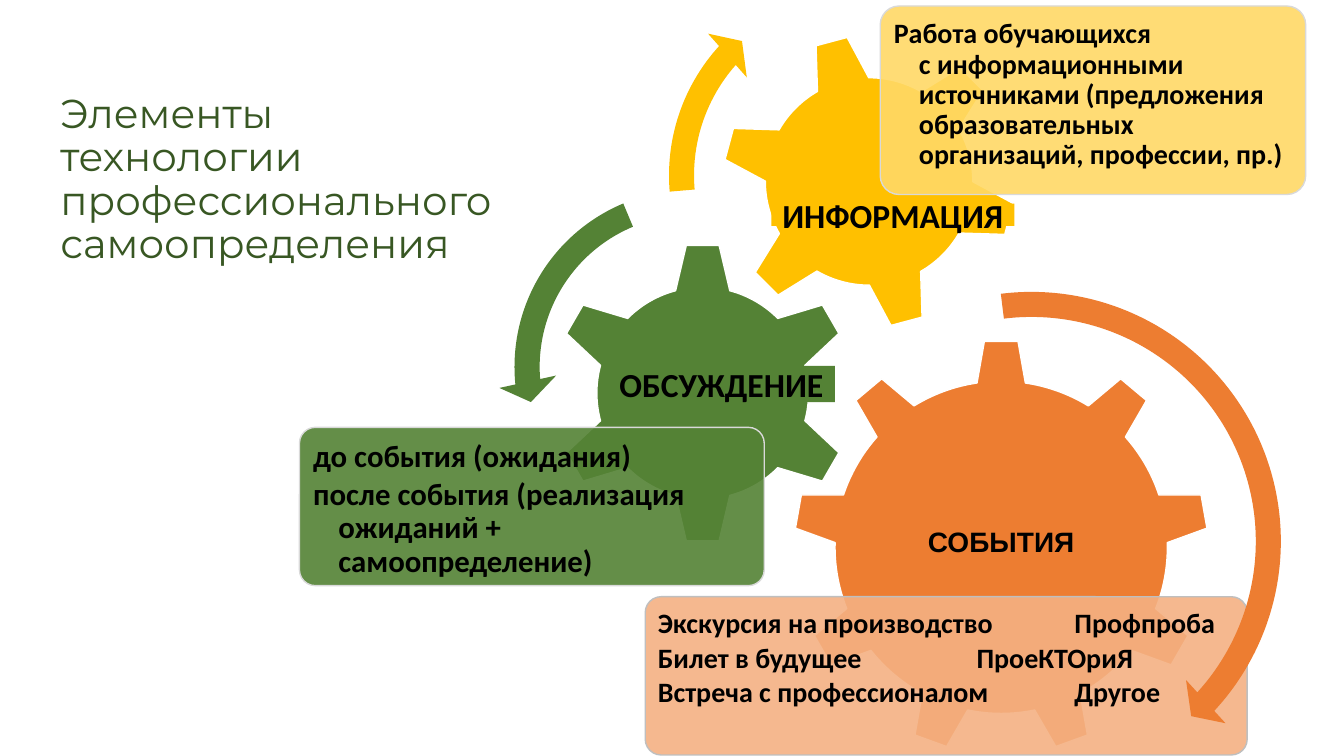
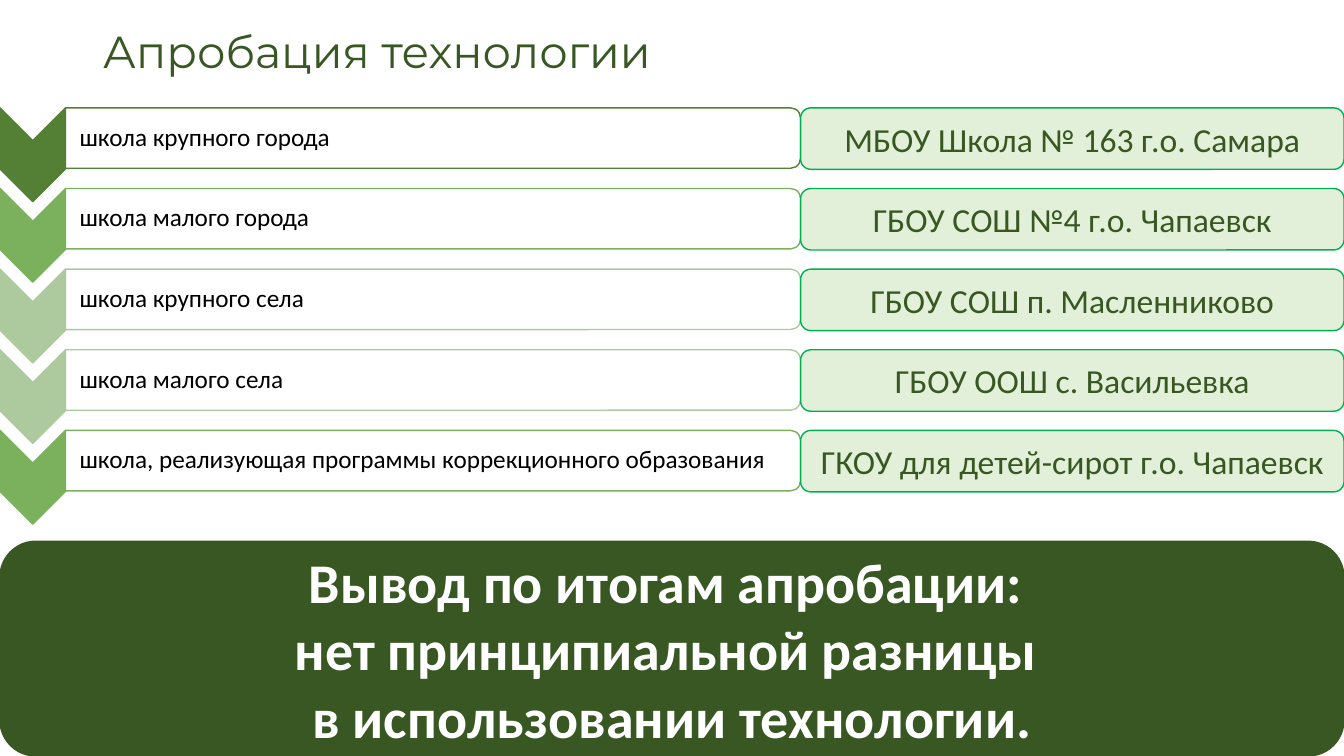
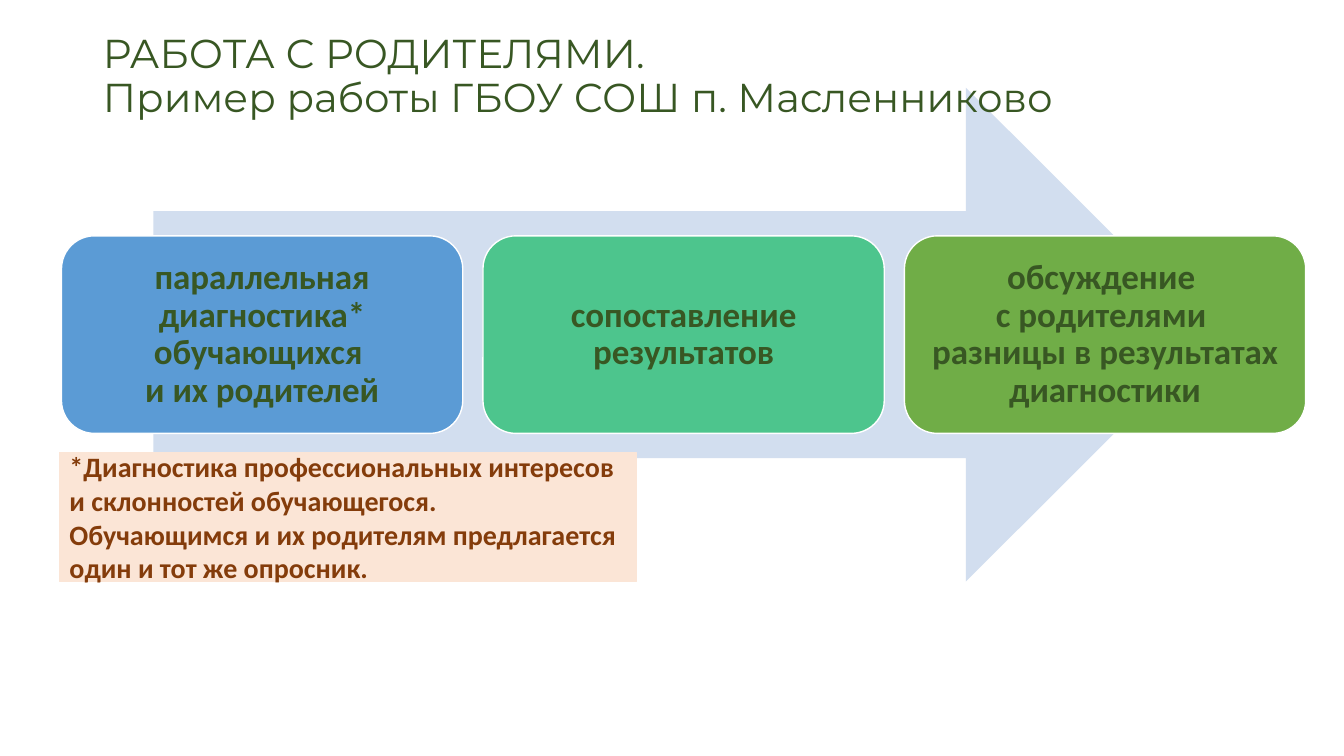
from dataclasses import dataclass

from lxml.etree import SubElement
from pptx import Presentation
from pptx.dml.color import RGBColor
from pptx.enum.shapes import MSO_SHAPE
from pptx.enum.text import MSO_ANCHOR, MSO_AUTO_SIZE, PP_ALIGN
from pptx.oxml.ns import qn
from pptx.util import Inches, Pt


@dataclass(frozen=True)
class Theme:
    title_font: str = "Montserrat"
    body_font: str = "Calibri"
    label_font: str = "Arial"
    title: float = 32
    title_small: float = 28.8
    conclusion: float = 40
    step: float = 25
    label: float = 24
    panel_large: float = 22
    panel: float = 20
    row: float = 18
    black: str = "000000"
    white: str = "FFFFFF"
    dark_green: str = "385723"
    gear_green: str = "548235"
    yellow: str = "FFC000"
    pale_yellow: str = "FFD966"
    orange: str = "ED7D31"
    pale_orange: str = "F4B183"
    light_gray: str = "D9D9D9"
    gray: str = "BFBFBF"
    deep_green: str = "538035"
    mid_green: str = "7BB15D"
    soft_green: str = "ACCA9E"
    pale_green: str = "E2F0D9"
    edge_green: str = "00B050"
    pale_blue: str = "D2DEEF"
    blue: str = "5B9BD5"
    mint: str = "4DC58D"
    leaf: str = "70AD47"
    peach: str = "FBE5D6"
    brown: str = "843C0B"


T = Theme()


def rgb(color):
    return RGBColor.from_string(color)


def add_title(prs, text, left, top, size):
    """Add a title-only slide and return it."""
    s = prs.slides.add_slide(prs.slide_layouts[5])
    title = s.shapes.title
    title.left, title.top = Inches(left), Inches(top)
    title.width, title.height = Inches(11.5), Inches(0.74)
    write(title, [text], size, T.dark_green, font=T.title_font,
          align=PP_ALIGN.LEFT, spacing=0.9)
    return s


def add_shape(s, kind, box, fill, line=None, opacity=100, rotation=0, adj=()):
    sp = s.shapes.add_shape(kind, *[Inches(v) for v in box])
    sp.shadow.inherit = False
    sp.rotation = rotation
    for i, value in enumerate(adj):
        sp.adjustments[i] = value
    sp.fill.solid()
    sp.fill.fore_color.rgb = rgb(fill)
    if opacity < 100:
        color = sp.element.spPr.find(qn("a:solidFill"))[0]
        SubElement(color, qn("a:alpha"), val=str(opacity * 1000))
    if line:
        sp.line.color.rgb = rgb(line)
        sp.line.width = Pt(1)
    else:
        sp.line.fill.background()
    return sp


def add_turned(s, kind, box, fill, line, opacity=100):
    """Add a shape turned by 90 degrees that covers the given box."""
    x, y, w, h = box
    frame = (x + (w - h) / 2, y + (h - w) / 2, h, w)
    return add_shape(s, kind, frame, fill, line, opacity, rotation=90)


def write(sp, texts, size, color, bold=False, font=T.body_font,
          align=PP_ALIGN.CENTER, anchor=MSO_ANCHOR.MIDDLE, spacing=None,
          after=0, insets=None, hanging=0):
    """Write one paragraph per text; after is a share of the type size."""
    tf = sp.text_frame
    tf.word_wrap = True
    tf.auto_size = MSO_AUTO_SIZE.NONE
    tf.vertical_anchor = anchor
    if insets:
        (tf.margin_left, tf.margin_top,
         tf.margin_right, tf.margin_bottom) = [Inches(v) for v in insets]
    for i, text in enumerate(texts):
        p = tf.paragraphs[0] if i == 0 else tf.add_paragraph()
        p.text = text
        p.alignment = align
        p.line_spacing = spacing
        p.space_after = Pt(size * after)
        if hanging:
            pPr = p._p.get_or_add_pPr()
            pPr.set("marL", str(Inches(hanging)))
            pPr.set("indent", str(-Inches(hanging)))
            pPr.set("defTabSz", str(Inches(0.97)))
        for r in p.runs:
            r.font.size = Pt(size)
            r.font.bold = bold
            r.font.name = font
            r.font.color.rgb = rgb(color)


def add_panel(s, box, fill, line, texts, size, inset):
    sp = add_shape(s, MSO_SHAPE.ROUNDED_RECTANGLE, box, fill, line, 90, adj=[0.1])
    write(sp, texts, size, T.black, bold=True, align=PP_ALIGN.LEFT,
          anchor=MSO_ANCHOR.TOP, spacing=0.9, after=0.15,
          insets=[inset] * 4, hanging=0.25)


def add_label(s, box, fill, text):
    write(add_shape(s, MSO_SHAPE.RECTANGLE, box, fill), [text],
          T.label, T.black, bold=True)


def build_elements(prs):
    s = add_title(prs, "Элементы \nтехнологии\nпрофессионального \nсамоопределения",
                  0.5, 1.42, T.title_small)

    events = add_shape(s, MSO_SHAPE.GEAR_9, (7.87, 3.37, 4.12, 4.12), T.orange, T.white)
    write(events, ["СОБЫТИЯ"], T.panel, T.black, bold=True, font=T.label_font,
          spacing=0.9, insets=[0.03] * 4)
    add_panel(s, (6.4, 5.92, 5.97, 1.57), T.pale_orange, T.gray,
              ["Экскурсия на производство\tПрофпроба",
               "Билет в будущее\t\tПроеКТОриЯ",
               "Встреча с профессионалом\tДругое"], T.panel, 0.08)

    add_shape(s, MSO_SHAPE.GEAR_6, (5.47, 2.4, 3, 3), T.gear_green, T.white)
    add_panel(s, (2.97, 4.24, 4.61, 1.57), T.gear_green, T.light_gray,
              ["до события (ожидания)",
               "после события (реализация \nожиданий + \nсамоопределение)"],
              T.panel_large, 0.09)

    add_shape(s, MSO_SHAPE.GEAR_6, (7.15, 0.33, 2.94, 2.94), T.yellow, T.white,
              rotation=345)
    add_panel(s, (8.73, 0.06, 4.22, 1.87), T.pale_yellow, T.light_gray,
              ["Работа обучающихся \nс информационными источниками (предложения "
               "образовательных организаций, профессии, пр.)"], T.panel, 0.08)

    for kind, box, color, adj in [
        (MSO_SHAPE.CIRCULAR_ARROW, (7.59, 2.73, 5.28, 5.28), T.orange,
         (0.047, 2.99, 25.57, 157.77, 0.055)),
        (MSO_SHAPE.LEFT_CIRCULAR_ARROW, (4.94, 1.72, 3.84, 3.84), T.gear_green,
         (0.065, 4.3, 104.89, 148.38, 0.075)),
        (MSO_SHAPE.CIRCULAR_ARROW, (6.47, -0.33, 4.14, 4.14), T.yellow,
         (0.06, 3.94, 133.14, 105.08, 0.07)),
    ]:
        add_shape(s, kind, box, color, adj=adj)

    add_label(s, (6.03, 3.63, 2.25, 0.36), T.gear_green, "ОБСУЖДЕНИЕ")
    add_label(s, (7.65, 2.02, 2.41, 0.22), T.yellow, "ИНФОРМАЦИЯ")


def add_school_row(s, top, color, kind, school):
    add_turned(s, MSO_SHAPE.CHEVRON, (0, top, 0.65, 0.93), color, color)
    add_turned(s, MSO_SHAPE.ROUND_2_SAME_RECTANGLE, (0.65, top, 7.29, 0.6),
               T.white, color, 90)
    text_box = s.shapes.add_textbox(Inches(0.65), Inches(top + 0.03),
                                    Inches(7.26), Inches(0.54))
    write(text_box, [kind], T.row, T.black, align=PP_ALIGN.LEFT, spacing=0.9,
          insets=(0.14, 0.01, 0.01, 0.01), hanging=0.19)
    card = add_shape(s, MSO_SHAPE.ROUNDED_RECTANGLE, (7.94, top, 5.39, 0.61),
                     T.pale_green, T.edge_green)
    write(card, [school], T.label, T.dark_green)


def build_trial(prs):
    s = add_title(prs, "Апробация технологии", 0.92, 0.17, T.title)
    rows = [
        (T.deep_green, "школа крупного города", "МБОУ Школа № 163 г.о. Самара"),
        (T.mid_green, "школа малого города", "ГБОУ СОШ №4 г.о. Чапаевск"),
        (T.soft_green, "школа крупного села", "ГБОУ СОШ п. Масленниково"),
        (T.soft_green, "школа малого села", "ГБОУ ООШ с. Васильевка"),
        (T.mid_green, "школа, реализующая программы коррекционного образования",
         "ГКОУ для детей-сирот г.о. Чапаевск"),
    ]
    for i, row in enumerate(rows):
        add_school_row(s, 1.07 + 0.8 * i, *row)

    conclusion = add_shape(s, MSO_SHAPE.ROUNDED_RECTANGLE, (0, 5.37, 13.33, 2.13),
                           T.dark_green, T.dark_green)
    write(conclusion, ["Вывод по итогам апробации: \nнет принципиальной разницы \n"
                       "в использовании технологии."],
          T.conclusion, T.white, bold=True)


def build_parents(prs):
    s = add_title(prs, "РАБОТА С РОДИТЕЛЯМИ. \nПример работы ГБОУ СОШ п. Масленниково",
                  0.92, 0.4, T.title_small)
    add_shape(s, MSO_SHAPE.RIGHT_ARROW, (1.52, 0.87, 10.51, 4.9), T.pale_blue)

    steps = [
        (T.blue, "параллельная диагностика* обучающихся \nи их родителей"),
        (T.mint, "сопоставление результатов"),
        (T.leaf, "обсуждение \nс родителями \nразницы в результатах диагностики"),
    ]
    for i, (color, text) in enumerate(steps):
        sp = add_shape(s, MSO_SHAPE.ROUNDED_RECTANGLE,
                       (0.61 + 4.18 * i, 2.34, 3.98, 1.96), color, T.white)
        write(sp, [text], T.step, T.dark_green, bold=True, spacing=0.9,
              insets=[0.1] * 4)

    note = add_shape(s, MSO_SHAPE.RECTANGLE, (0.59, 4.49, 5.72, 1.28), T.peach, T.peach)
    write(note, ["*Диагностика профессиональных интересов \nи склонностей обучающегося.",
                 "Обучающимся и их родителям предлагается",
                 "один и тот же опросник."],
          T.panel, T.brown, bold=True, align=PP_ALIGN.LEFT)

    # The title lies above the tip of the arrow.
    title = s.shapes.title.element
    title.getparent().append(title)


def main():
    prs = Presentation()
    prs.slide_width, prs.slide_height = Inches(13.33), Inches(7.5)
    build_elements(prs)
    build_trial(prs)
    build_parents(prs)
    prs.save("out.pptx")


if __name__ == "__main__":
    main()
